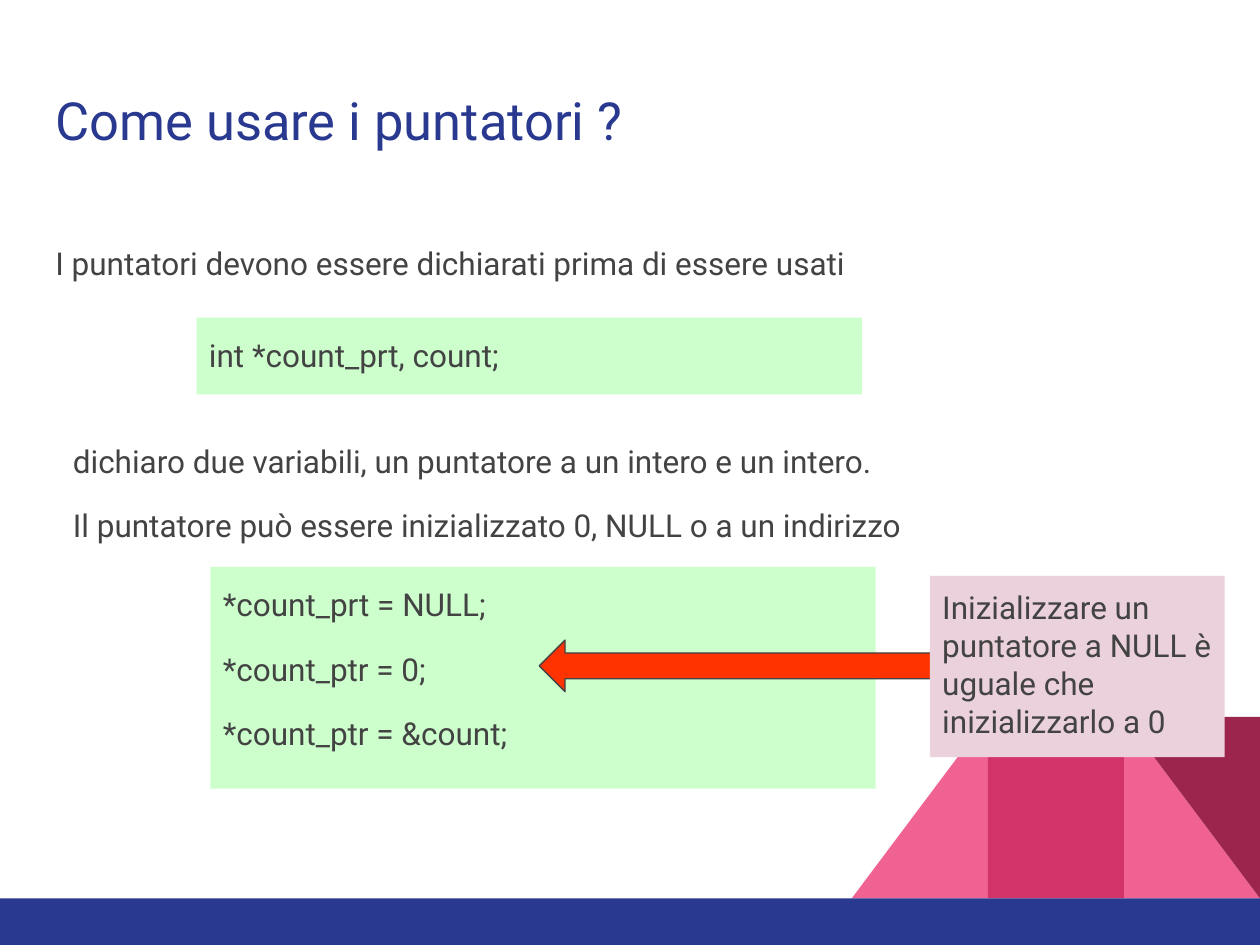
from pptx import Presentation
from pptx.dml.color import RGBColor
from pptx.enum import shapes, text
from pptx.util import Inches, Pt

BLUE = RGBColor(0x2A, 0x39, 0x90)
GREY = RGBColor(0x43, 0x43, 0x43)
GREEN = RGBColor(0xCC, 0xFF, 0xCC)
ROSE = RGBColor(0xEA, 0xD1, 0xDC)
RED = RGBColor(0xFF, 0x33, 0x00)
PINK = RGBColor(0xF0, 0x62, 0x92)
DEEP = RGBColor(0xD2, 0x33, 0x69)
WINE = RGBColor(0x9C, 0x25, 0x4D)
KIND = shapes.MSO_SHAPE


def add_form(slide, kind, box, fill, line=None):
    """Add a flat preset shape with an optional thin outline."""
    form = slide.shapes.add_shape(kind, *map(Inches, box))
    form.shadow.inherit = False
    form.fill.solid()
    form.fill.fore_color.rgb = fill
    if line is None:
        form.line.fill.background()
    else:
        form.line.color.rgb = line
        form.line.width = Pt(0.75)
    return form


def add_text(slide, box, lines, size=18, color=GREY, fill=None, pitch=1.15, gap=12):
    """Add top-left text, one paragraph a line, on a filled or bare box."""
    if fill is None:
        form = slide.shapes.add_textbox(*map(Inches, box))
    else:
        form = add_form(slide, KIND.RECTANGLE, box, fill)
    frame = form.text_frame
    frame.word_wrap = True
    frame.vertical_anchor = text.MSO_ANCHOR.TOP
    frame.margin_left = frame.margin_right = Inches(0.1)
    frame.margin_top = frame.margin_bottom = Inches(0.1)
    for i, line in enumerate(lines):
        para = frame.paragraphs[0] if i == 0 else frame.add_paragraph()
        para.alignment = text.PP_ALIGN.LEFT
        para.line_spacing = pitch
        para.space_before = Pt(gap if i else 0)
        run = para.add_run()
        run.text = line
        run.font.name = "Roboto"
        run.font.size = Pt(size)
        run.font.color.rgb = color


def add_decor(slide):
    """Add the corner triangles and the bar at the foot."""
    side, top, high = 1.08, 5.69, 1.44
    left, mid, right = (10 - n * side for n in (3, 2, 1))
    add_form(slide, KIND.RIGHT_TRIANGLE, (right, top, side, high), PINK)
    slope = add_form(slide, KIND.RIGHT_TRIANGLE, (left, top, side, high), PINK)
    slope._element.spPr.xfrm.set("flipH", "1")
    add_form(slide, KIND.RECTANGLE, (mid, top, side, high), DEEP)
    add_form(slide, KIND.RIGHT_TRIANGLE, (right, top, side, high), WINE).rotation = 180
    add_form(slide, KIND.RECTANGLE, (0, 7.13, 10, 0.37), BLUE)


def main():
    """Build the slide and save it."""
    deck = Presentation()
    deck.slide_width, deck.slide_height = Inches(10), Inches(7.5)
    slide = deck.slides.add_slide(deck.slide_layouts[6])
    add_decor(slide)
    add_text(slide, (0.34, 0.6, 9.32, 0.89), ["Come usare i puntatori ?"],
             size=30, color=BLUE, pitch=1)
    add_text(slide, (0.34, 1.79, 9.32, 0.61),
             ["I puntatori devono essere dichiarati prima di essere usati"])
    add_text(slide, (1.56, 2.52, 5.28, 0.61), ["int *count_prt, count;"], fill=GREEN)
    add_text(slide, (0.48, 3.36, 9.32, 1.2),
             ["dichiaro due variabili, un puntatore a un intero e un intero.",
              "Il puntatore può essere inizializzato 0, NULL o a un indirizzo"])
    add_text(slide, (1.67, 4.5, 5.28, 1.76),
             ["*count_prt = NULL;", "*count_ptr = 0;", "*count_ptr = &count;"],
             fill=GREEN)
    add_form(slide, KIND.LEFT_ARROW, (4.28, 5.08, 3.48, 0.41), RED, line=GREY)
    add_text(slide, (7.38, 4.57, 2.34, 1.44),
             ["Inizializzare un puntatore a NULL è uguale che inizializzarlo a 0"],
             fill=ROSE, pitch=1)
    deck.save("out.pptx")


if __name__ == "__main__":
    main()
